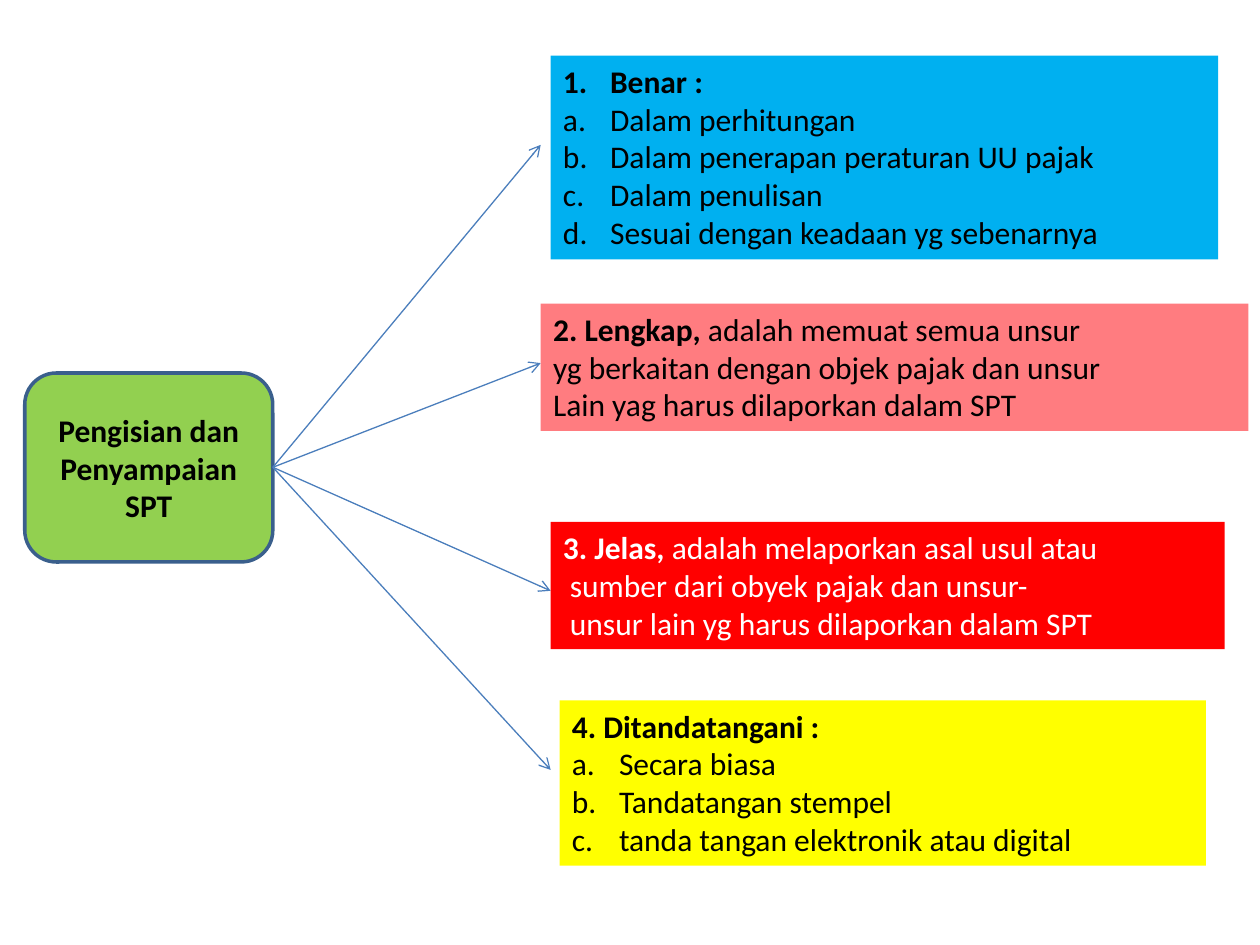
from lxml.etree import SubElement
from pptx import Presentation
from pptx.dml.color import RGBColor
from pptx.enum.shapes import MSO_CONNECTOR, MSO_SHAPE
from pptx.enum.text import MSO_ANCHOR, PP_ALIGN
from pptx.oxml.ns import qn
from pptx.util import Cm, Pt


def color(hex_text):
    return RGBColor.from_string(hex_text)


def write(paragraph, text, lead="", ink="000000", numbering=None, indent=0, align=PP_ALIGN.LEFT):
    """Write a bold lead followed by plain text, optionally numbered or indented."""
    paragraph.alignment = align
    properties = paragraph._p.get_or_add_pPr()
    if numbering:
        properties.set("marL", str(Cm(0.95)))
        properties.set("indent", str(-Cm(0.95)))
        SubElement(properties, qn("a:buFont"), typeface="+mj-lt")
        SubElement(properties, qn("a:buAutoNum"), type=numbering)
    elif indent:
        properties.set("marL", str(Cm(indent)))
    for part, bold in ((lead, True), (text, False)):
        if part:
            run = paragraph.add_run()
            run.text = part
            run.font.name, run.font.size, run.font.bold = "Calibri", Pt(18), bold
            run.font.color.rgb = color(ink)


deck = Presentation()
deck.slide_width, deck.slide_height = Cm(25.4), Cm(19.05)
slide = deck.slides.add_slide(deck.slide_layouts[6])

# Topic on the left
topic = slide.shapes.add_shape(MSO_SHAPE.ROUNDED_RECTANGLE, Cm(0.5), Cm(7.52), Cm(5), Cm(3.81))
topic.shadow.inherit = False
topic.fill.solid()
topic.fill.fore_color.rgb = color("92D050")
topic.line.color.rgb = color("3A5F8C")
topic.line.width = Pt(2)
topic.text_frame.word_wrap = True
topic.text_frame.vertical_anchor = MSO_ANCHOR.MIDDLE
write(topic.text_frame.paragraphs[0], "", lead="Pengisian dan Penyampaian SPT", align=PP_ALIGN.CENTER)

# Requirements: place, fill, text colour, arrow end, lines
letters = {"numbering": "alphaLcPeriod"}
requirements = [
    ((11.1, 1.12, 13.46, 4.11), "00B0F0", "000000", (10.9, 2.92), [
        ("Benar :", "", {"numbering": "arabicPeriod"}),
        ("", "Dalam perhitungan", letters),
        ("", "Dalam penerapan peraturan UU pajak", letters),
        ("", "Dalam penulisan", letters),
        ("", "Sesuai dengan keadaan yg sebenarnya", letters)]),
    ((10.9, 6.12, 14.27, 2.57), "FF7C80", "000000", (10.9, 7.32), [
        ("2. Lengkap,", " adalah memuat semua unsur", {}),
        ("", "yg berkaitan dengan objek pajak dan unsur", {}),
        ("", "Lain yag harus dilaporkan dalam SPT", {})]),
    ((11.1, 10.52, 13.59, 2.57), "FF0000", "FFFFFF", (11.1, 11.91), [
        ("3. Jelas, ", "adalah melaporkan asal usul atau", {}),
        ("", "sumber dari obyek pajak dan unsur-", {"indent": 0.14}),
        ("", "unsur lain yg harus dilaporkan dalam SPT", {"indent": 0.14})]),
    ((11.28, 14.12, 13.03, 3.33), "FFFF00", "000000", (11.1, 15.52), [
        ("4. Ditandatangani :", "", {}),
        ("", "Secara biasa", letters),
        ("", "Tandatangan stempel", letters),
        ("", "tanda tangan elektronik atau digital", letters)]),
]

for place, fill, ink, arrow_end, lines in requirements:
    # Arrow from the topic
    arrow = slide.shapes.add_connector(
        MSO_CONNECTOR.STRAIGHT, Cm(5.5), Cm(9.42), *map(Cm, arrow_end))
    arrow.line.color.rgb = color("4B7EBC")
    arrow.line.width = Pt(0.75)
    SubElement(arrow.line._get_or_add_ln(), qn("a:tailEnd"), type="arrow")
    SubElement(arrow._element.spPr, qn("a:effectLst"))

    # Requirement box
    requirement = slide.shapes.add_textbox(*map(Cm, place))
    requirement.fill.solid()
    requirement.fill.fore_color.rgb = color(fill)
    frame = requirement.text_frame
    frame.word_wrap = True
    for number, (lead, text, layout) in enumerate(lines):
        paragraph = frame.add_paragraph() if number else frame.paragraphs[0]
        write(paragraph, text, lead=lead, ink=ink, **layout)

deck.save("out.pptx")
